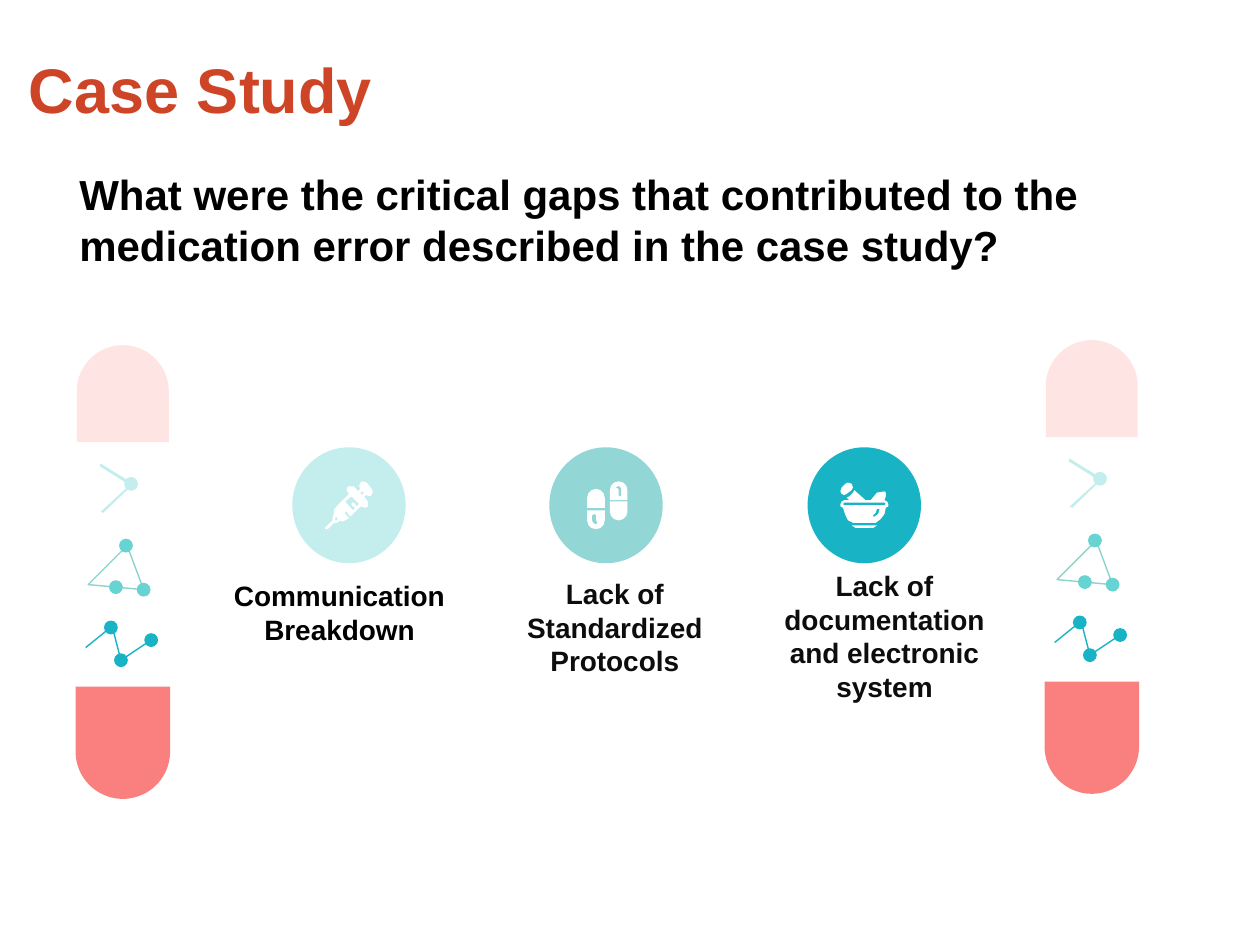
"""Build the case study slide with three critical gaps between two capsules."""
from pptx import Presentation
from pptx.dml.color import RGBColor
from pptx.enum.shapes import MSO_SHAPE
from pptx.enum.text import MSO_ANCHOR, MSO_AUTO_SIZE, PP_ALIGN
from pptx.util import Inches, Pt

TITLE = "Case Study"
QUESTION = ("What were the critical gaps that contributed to the "
            "medication error described in the case study?")
WHITE, PALE, MINT, AQUA, TEAL = "FFFFFF", "C4EEEE", "93D6D6", "68D3D3", "18B3C4"
TRIANGLE_LINE, PINK, CORAL = "8CD3CB", "FFE4E4", "FA8080"

GAPS = [
    ("Communication Breakdown", "000000", PALE, 2.32, (1.66, 4.7, 2.07, 0.32)),
    ("Lack of Standardized Protocols", "0D0D0D", MINT, 4.36, (4.06, 4.82, 1.64, 0.31)),
    ("Lack of documentation and electronic system", "0D0D0D", TEAL, 6.41,
     (6.03, 4.83, 1.98, 0.43)),
]
CAPSULE_OFFSETS = [(0, 0), (7.69, -0.04)]
DOT_SIZE = 0.11
DOTS = [(1.04, 3.84, PALE), (1.0, 4.33, AQUA), (1.14, 4.68, AQUA), (0.92, 4.66, AQUA),
        (0.88, 4.98, TEAL), (0.96, 5.24, TEAL), (1.2, 5.08, TEAL)]
CHEVRON = [(0.8, 3.68), (0.79, 3.7), (1.03, 3.85), (0.8, 4.06), (0.82, 4.07), (1.06, 3.84)]
TRIANGLE = [(0.7, 4.64), (1.01, 4.33), (1.14, 4.68)]
ZIGZAG = [(0.68, 5.14), (0.89, 4.97), (0.96, 5.24), (1.2, 5.08)]

SYRINGE = [
    [(2.88, 3.82), (2.86, 3.83), (2.85, 3.86), (2.86, 3.88), (2.84, 3.9), (2.81, 3.86),
     (2.79, 3.86), (2.76, 3.86), (2.75, 3.89), (2.77, 3.92), (2.67, 4.02), (2.65, 4.05),
     (2.65, 4.08), (2.64, 4.1), (2.64, 4.13), (2.58, 4.19), (2.58, 4.2), (2.6, 4.2),
     (2.65, 4.15), (2.67, 4.15), (2.69, 4.14), (2.7, 4.13), (2.72, 4.14), (2.76, 4.12),
     (2.77, 4.11), (2.74, 4.08), (2.74, 4.06), (2.75, 4.06), (2.78, 4.1), (2.86, 4.02),
     (2.9, 4.03), (2.92, 4.02), (2.92, 3.98), (2.89, 3.94), (2.91, 3.93), (2.93, 3.94),
     (2.95, 3.93), (2.96, 3.9), (2.95, 3.88), (2.91, 3.83)],
    [(2.88, 3.9), (2.89, 3.91), (2.87, 3.93), (2.86, 3.91)],
    [(2.79, 3.94), (2.85, 4), (2.83, 4.02), (2.81, 3.99), (2.79, 3.99), (2.79, 4.01),
     (2.82, 4.03), (2.8, 4.05), (2.74, 3.98)],
    [(2.67, 4.1), (2.68, 4.12), (2.67, 4.13), (2.66, 4.13), (2.66, 4.11)],
]
BOWL = [
    [(6.78, 3.89), (6.77, 3.91), (6.74, 3.94), (6.72, 3.95), (6.74, 3.97), (6.7, 3.97),
     (6.68, 3.98), (6.67, 4), (6.67, 4.02), (6.69, 4.03), (6.71, 4.09), (6.73, 4.13),
     (6.77, 4.15), (6.95, 4.15), (6.99, 4.12), (7.02, 4.08), (7.03, 4.03), (7.05, 4.02),
     (7.05, 4), (7.04, 3.98), (7.02, 3.97), (7.03, 3.94), (7.03, 3.91), (7.02, 3.9),
     (6.96, 3.91), (6.91, 3.97), (6.87, 3.97)],
    [(6.7, 3.99), (7.02, 3.99), (7.03, 4), (7.02, 4.01), (6.7, 4.01), (6.69, 4)],
    [(6.98, 4.04), (6.97, 4.08), (6.94, 4.1), (6.93, 4.1), (6.93, 4.09), (6.95, 4.07),
     (6.96, 4.04)],
]
PESTLE = [(6.73, 3.83), (6.71, 3.84), (6.68, 3.87), (6.67, 3.9), (6.68, 3.92), (6.7, 3.93),
          (6.72, 3.92), (6.76, 3.89), (6.77, 3.87), (6.76, 3.84)]
BASE = [(6.76, 4.17), (6.79, 4.19), (6.93, 4.19), (6.96, 4.17)]
PILL_HALVES = [(4.66, 3.88, True), (4.66, 4.05, False), (4.84, 3.82, True), (4.84, 3.98, False)]
PILL_SHINES = [
    [(4.72, 4.08), (4.73, 4.09), (4.73, 4.13), (4.74, 4.15), (4.73, 4.16), (4.71, 4.15),
     (4.7, 4.13), (4.7, 4.09)],
    [(4.9, 3.86), (4.92, 3.86), (4.93, 3.88), (4.93, 3.93), (4.92, 3.94), (4.91, 3.93),
     (4.91, 3.88), (4.89, 3.87)],
]


def colour(value):
    return RGBColor.from_string(value)


def finish(shape, fill=None, line=None):
    shape.shadow.inherit = False
    if fill:
        shape.fill.solid()
        shape.fill.fore_color.rgb = colour(fill)
    else:
        shape.fill.background()
    if line:
        shape.line.color.rgb = colour(line)
        shape.line.width = Pt(0.78)
    else:
        shape.line.fill.background()
    return shape


def add_preset(page, kind, box, fill):
    return finish(page.shapes.add_shape(kind, *map(Inches, box)), fill)


def add_outline(page, contours, offset=(0, 0), close=True, **style):
    moved = [[(Inches(x + offset[0]), Inches(y + offset[1])) for x, y in points]
             for points in contours]
    builder = page.shapes.build_freeform(*moved[0][0], scale=1.0)
    for index, points in enumerate(moved):
        if index:
            builder.move_to(*points[0])
        builder.add_line_segments(points[1:], close=close)
    return finish(builder.convert_to_shape(), **style)


def add_half(page, box, fill, top):
    half = add_preset(page, MSO_SHAPE.ROUND_2_SAME_RECTANGLE, box, fill)
    half.adjustments[0], half.adjustments[1] = (0.5, 0) if top else (0, 0.5)


def write(box, text, *, place, size, color, align=PP_ALIGN.LEFT,
          anchor=MSO_ANCHOR.TOP, margin=0, before=0):
    box.left, box.top, box.width, box.height = map(Inches, place)
    frame = box.text_frame
    frame.word_wrap = True
    frame.auto_size = MSO_AUTO_SIZE.NONE
    frame.vertical_anchor = anchor
    frame.margin_left = frame.margin_right = Inches(margin)
    frame.margin_top = frame.margin_bottom = Inches(margin)
    para = frame.paragraphs[0]
    para.alignment = align
    para.space_before = Pt(before)
    span = para.add_run()
    span.text = text
    span.font.name = "Arial"
    span.font.size = Pt(size)
    span.font.bold = True
    span.font.color.rgb = colour(color)


def add_capsule(page, offset):
    dx, dy = offset
    add_half(page, (0.61 + dx, 2.74 + dy, 0.73, 0.77), PINK, True)
    add_half(page, (0.6 + dx, 5.45 + dy, 0.75, 0.89), CORAL, False)
    add_outline(page, [CHEVRON], offset, fill=PALE)
    add_outline(page, [TRIANGLE], offset, line=TRIANGLE_LINE)
    add_outline(page, [ZIGZAG], offset, close=False, line=TEAL)
    for x, y, fill in DOTS:
        corner = (x + dx - DOT_SIZE / 2, y + dy - DOT_SIZE / 2)
        add_preset(page, MSO_SHAPE.OVAL, (*corner, DOT_SIZE, DOT_SIZE), fill)


def add_icons(page):
    for contours in (SYRINGE, BOWL, [PESTLE], [BASE]):
        add_outline(page, contours, fill=WHITE)
    for left, top, is_top in PILL_HALVES:
        add_half(page, (left, top, 0.14, 0.15), WHITE, is_top)
    for shine in PILL_SHINES:
        add_outline(page, [shine], fill=MINT)


def main():
    deck = Presentation()
    deck.slide_width, deck.slide_height = Inches(10), Inches(7.5)
    page = deck.slides.add_slide(deck.slide_layouts[5])
    write(page.shapes.title, TITLE, place=(0.23, 0.4, 6.64, 0.62), size=36,
          color="CD4526", before=1)
    write(page.shapes.add_textbox(0, 0, 0, 0), QUESTION, place=(0.63, 1.34, 8.33, 0.81),
          size=24, color="000000")
    for offset in CAPSULE_OFFSETS:
        add_capsule(page, offset)
    for label, ink, fill, left, place in GAPS:
        add_preset(page, MSO_SHAPE.OVAL, (left, 3.55, 0.9, 0.92), fill)
        write(page.shapes.add_textbox(0, 0, 0, 0), label, place=place, size=16, color=ink,
              align=PP_ALIGN.CENTER, anchor=MSO_ANCHOR.MIDDLE, margin=0.1)
    add_icons(page)
    deck.save("out.pptx")


if __name__ == "__main__":
    main()
